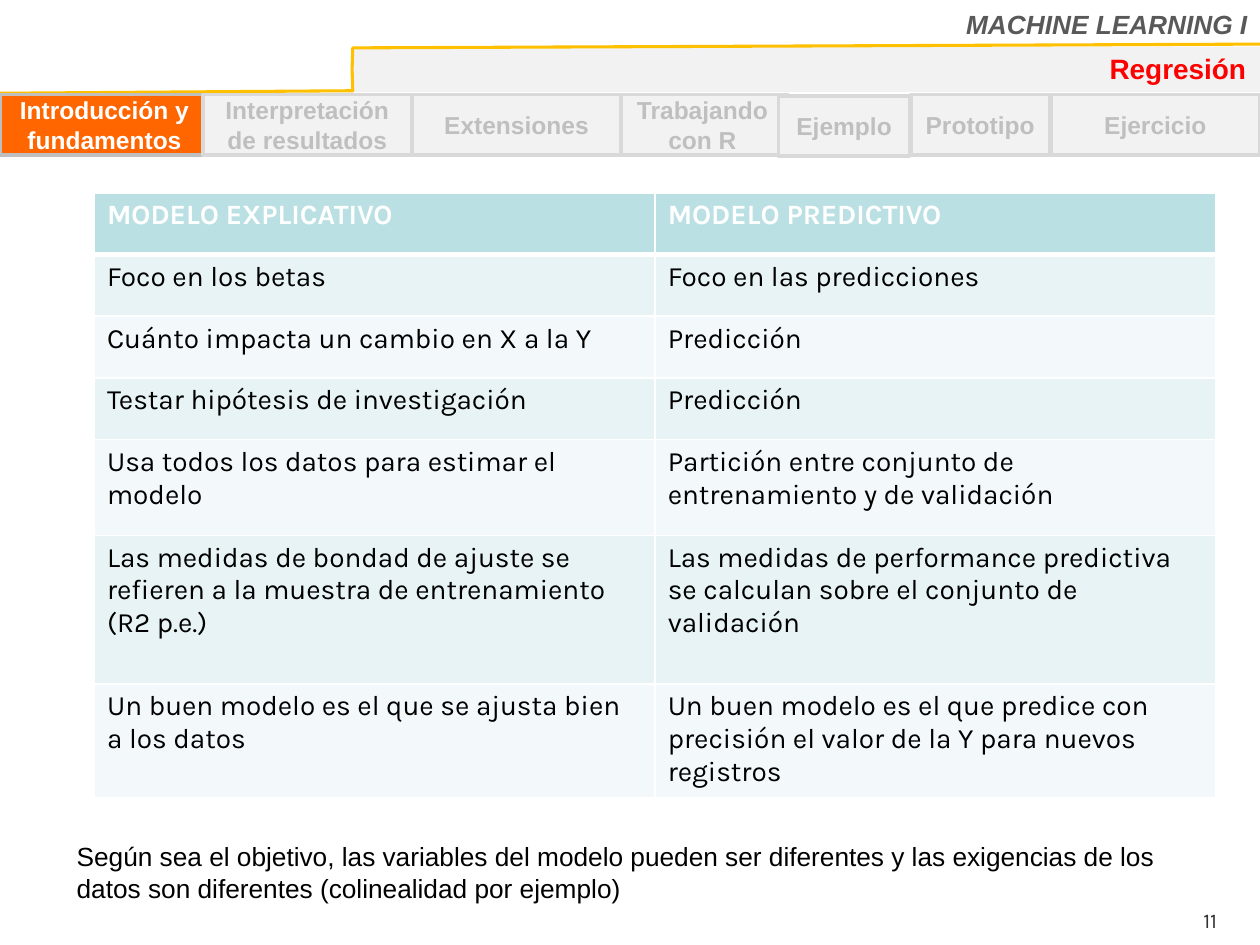
from lxml import etree
from pptx import Presentation
from pptx.dml.color import RGBColor
from pptx.enum.shapes import MSO_SHAPE as SHAPE
from pptx.enum.text import MSO_ANCHOR as ANCHOR, PP_ALIGN as ALIGN
from pptx.oxml.ns import qn
from pptx.util import Inches, Pt

WHITE = RGBColor(0xFF, 0xFF, 0xFF)
BLACK = RGBColor(0x00, 0x00, 0x00)
DARK = RGBColor(0x33, 0x33, 0x33)
SLATE = RGBColor(0x59, 0x59, 0x59)
MID = RGBColor(0xBF, 0xBF, 0xBF)
SILVER = RGBColor(0xD9, 0xD9, 0xD9)
PALE = RGBColor(0xF2, 0xF2, 0xF2)
RED = RGBColor(0xFF, 0x00, 0x00)
ORANGE = RGBColor(0xFF, 0x66, 0x00)
GOLD = RGBColor(0xFF, 0xC0, 0x00)
TEAL = RGBColor(0xBB, 0xE0, 0xE3)
BANDS = RGBColor(0xF3, 0xF9, 0xFA), RGBColor(0xE7, 0xF3, 0xF4)

prs = Presentation()
prs.slide_width, prs.slide_height = Inches(10), Inches(7.5)
s = prs.slides.add_slide(prs.slide_layouts[6])


def grid(*cells):
    """Lengths on a square grid of 100 columns by 75 rows."""
    return [round(n * prs.slide_width / 100) for n in cells]


def write(tf, text, size=16, font="Arial", color=BLACK, bold=False,
          italic=False, align=ALIGN.LEFT, side=1, anchor=ANCHOR.TOP):
    tf.word_wrap = True
    tf.vertical_anchor = anchor
    tf.margin_left, tf.margin_right, tf.margin_top, tf.margin_bottom = grid(
        side, side, 0.5, 0.5)
    p = tf.paragraphs[0]
    p.alignment = align
    r = p.add_run()
    r.text = text
    r.font.size, r.font.name = Pt(size), font
    r.font.bold, r.font.italic = bold, italic
    r.font.color.rgb = color


# Page number
sp = s.shapes.add_textbox(*grid(92.5, 71.5, 7.1, 3))
write(sp.text_frame, "11", size=12, font="Karla", color=DARK, align=ALIGN.CENTER)

# Header band with its stepped gold line
sp = s.shapes.add_shape(SHAPE.RECTANGLE, *grid(28, 3.7, 72, 3.6))
sp.shadow.inherit = False
sp.fill.solid()
sp.fill.fore_color.rgb = PALE
sp.line.fill.background()

outline = s.shapes.build_freeform(*grid(100, 3.5))
outline.add_line_segments(
    [grid(28, 3.8), grid(27.95, 5.5), grid(28, 7.2), grid(0, 7.4)], close=False)
sp = outline.convert_to_shape()
sp.shadow.inherit = False
sp.fill.background()
sp.line.color.rgb, sp.line.width = GOLD, Pt(1.75)

# Course and topic titles
sp = s.shapes.add_textbox(*grid(58.7, 0.2, 41.3, 3.5))
write(sp.text_frame, "MACHINE LEARNING I", size=15, color=SLATE,
      bold=True, italic=True, align=ALIGN.RIGHT)
sp = s.shapes.add_textbox(*grid(28, 3.6, 71.1, 3.7))
write(sp.text_frame, "Regresión", color=RED, bold=True, align=ALIGN.RIGHT, side=0.2)

# Navigation tabs, back to front: text, column, row, width
tabs = [
    ("Introducción y fundamentos", 0, 7.5, 16.6),
    ("Interpretación de resultados", 16.1, 7.5, 16.6),
    ("Trabajando con R", 48.9, 7.5, 13.7),
    ("Prototipo", 72.3, 7.5, 11),
    ("Ejercicio", 83.4, 7.5, 16.6),
    ("Ejemplo", 61.8, 7.6, 10.4),
    ("Extensiones", 32.7, 7.5, 16.6),
]
for i, (text, col, row, width) in enumerate(tabs):
    fill, line, color = (PALE, SILVER, MID) if i else (ORANGE, MID, WHITE)
    sp = s.shapes.add_shape(SHAPE.RECTANGLE, *grid(col, row, width, 4.8))
    sp.shadow.inherit = False
    sp.fill.solid()
    sp.fill.fore_color.rgb = fill
    sp.line.color.rgb, sp.line.width = line, Pt(2)
    write(sp.text_frame, text, size=14, color=color, bold=True,
          align=ALIGN.CENTER, side=0.4, anchor=ANCHOR.MIDDLE)

# Comparison table
rows = [
    ("MODELO EXPLICATIVO", "MODELO PREDICTIVO"),
    ("Foco en los betas", "Foco en las predicciones"),
    ("Cuánto impacta un cambio en X a la Y", "Predicción"),
    ("Testar hipótesis de investigación", "Predicción"),
    ("Usa todos los datos para estimar el modelo",
     "Partición entre conjunto de entrenamiento y de validación"),
    ("Las medidas de bondad de ajuste se refieren a la muestra de "
     "entrenamiento (R2 p.e.)",
     "Las medidas de performance predictiva se calculan sobre el conjunto "
     "de validación"),
    ("Un buen modelo es el que se ajusta bien a los datos",
     "Un buen modelo es el que predice con precisión el valor de la Y para "
     "nuevos registros"),
]
heights = grid(4.9, 4.9, 4.9, 4.9, 7.6, 11.8, 8.5)
table = s.shapes.add_table(len(rows), 2, *grid(7.5, 15.3, 89, 47.5)).table
for i, (texts, height) in enumerate(zip(rows, heights)):
    table.rows[i].height = height
    header = i == 0
    for j, text in enumerate(texts):
        cell = table.cell(i, j)
        write(cell.text_frame, text, font="Karla", bold=header,
              color=WHITE if header else BLACK)
        cell.fill.solid()
        cell.fill.fore_color.rgb = TEAL if header else BANDS[i % 2]
        # White borders, thicker between the header and the body
        tc_pr = cell._tc.get_or_add_tcPr()
        for k, side in enumerate("LRTB"):
            thick = (i, side) in ((0, "B"), (1, "T"))
            ln = etree.Element(qn(f"a:ln{side}"), w=str(Pt(3 if thick else 1)))
            fill = etree.SubElement(ln, qn("a:solidFill"))
            etree.SubElement(fill, qn("a:srgbClr"), val=str(WHITE))
            tc_pr.insert(k, ln)

# Closing remark
sp = s.shapes.add_textbox(*grid(5.1, 66.2, 88.2, 6.1))
write(sp.text_frame,
      "Según sea el objetivo, las variables del modelo pueden ser diferentes y "
      "las exigencias de los datos son diferentes (colinealidad por ejemplo)",
      size=15)

prs.save("out.pptx")
